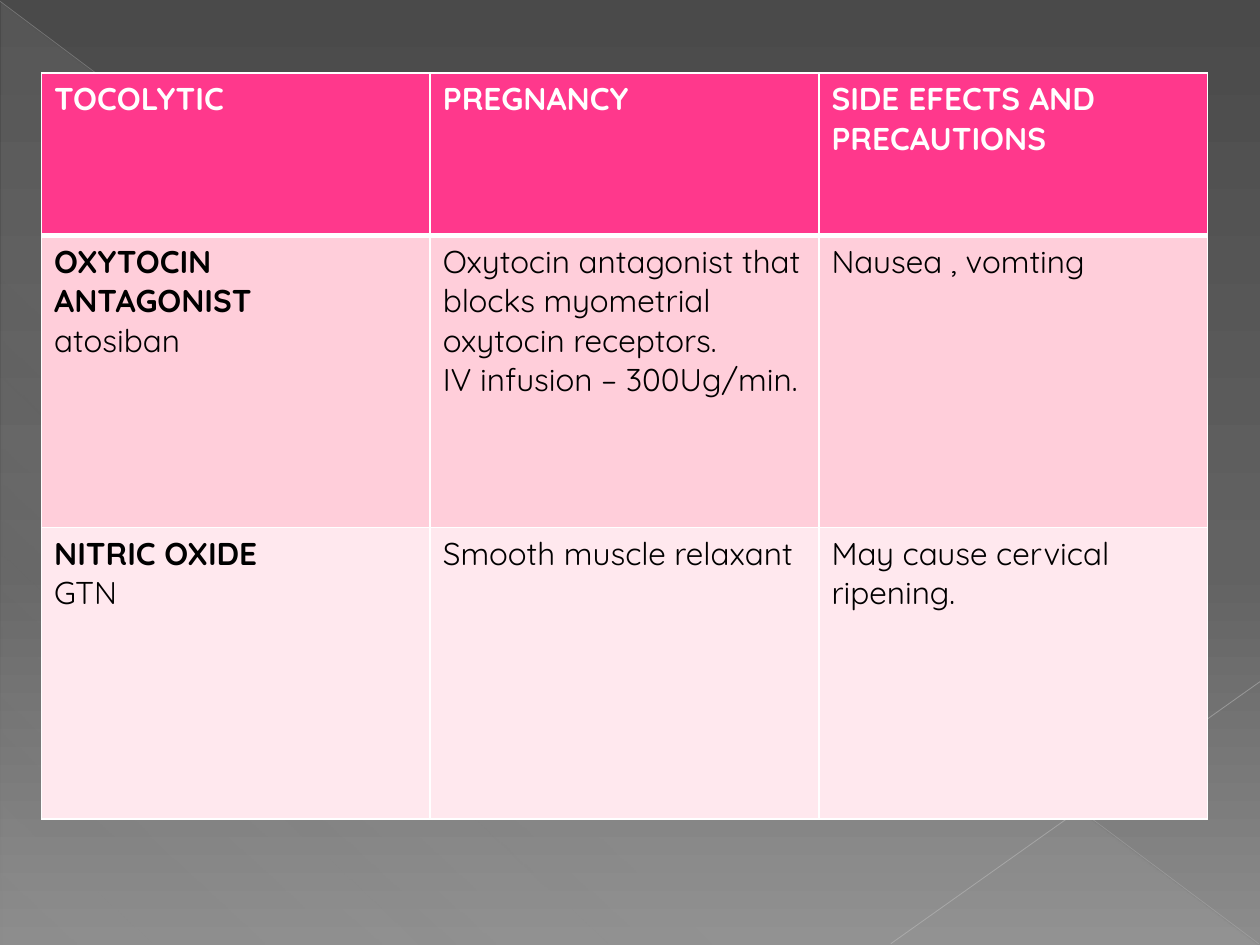
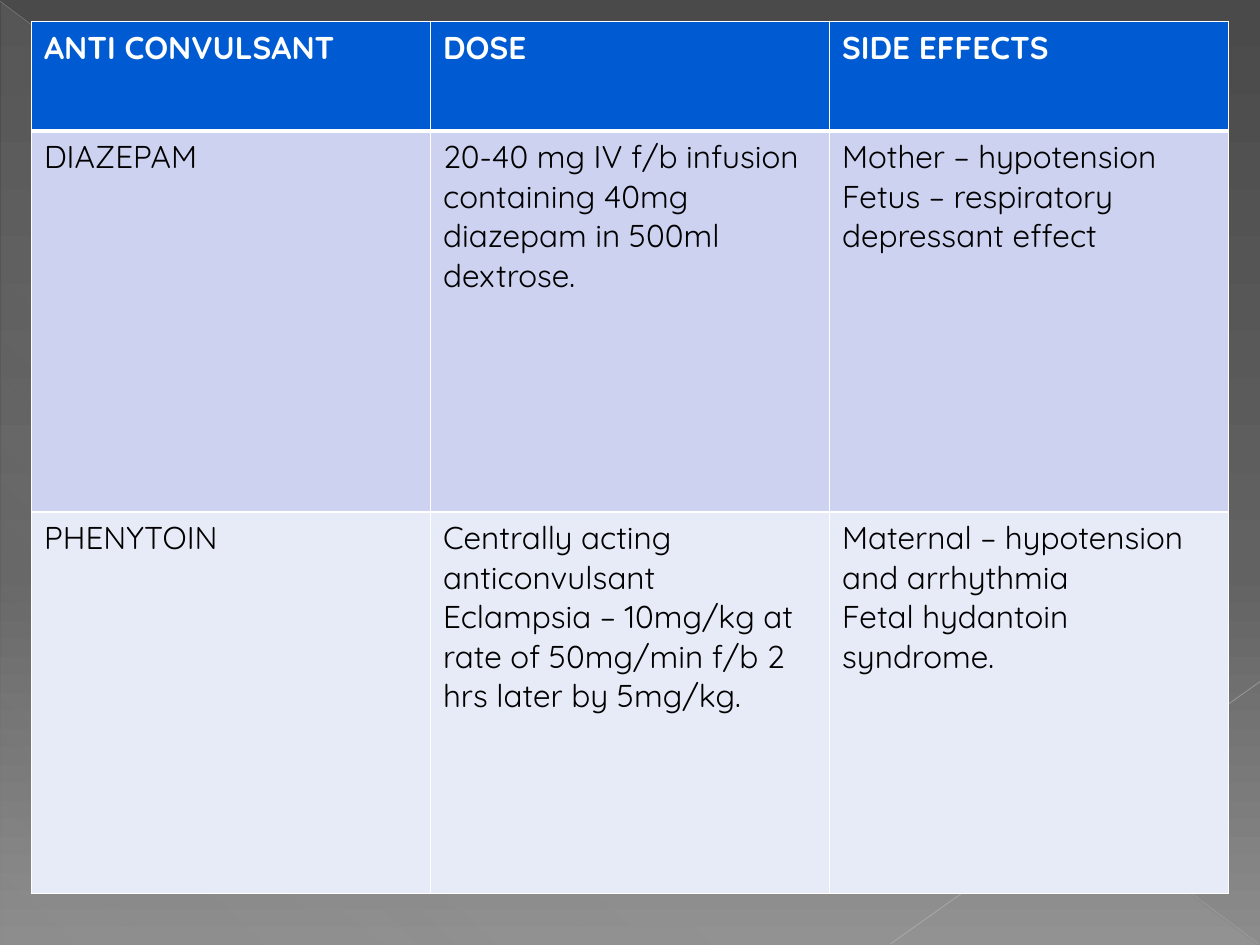
import pptx
import pptx.dml.color
import pptx.enum.shapes
import pptx.oxml
import pptx.oxml.ns
import pptx.util
from pptx.util import Inches

FONT = "Quicksand"
TEXT_SIZE = 18
WHITE, BLACK = "FFFFFF", "000000"

# Gradient stops: position in percent, colour, opacity in percent
BACKGROUND = [(0, "4A4A4A", 100), (60, "626262", 100), (100, "8C8C8C", 100)]
TRIANGLE = [(0, "D2D2D2", 10), (70, "D2D2D2", 8), (100, "D2D2D2", 1)]
# Thin lines: start, end, colour, width in points, opacity in percent
DIAGONALS = [
    ((0, 0.01), (9.99, 7.49), "BFBFBF", 0.39, 35),
    ((10, 5.41), (7.07, 7.49), "C6C6C6", 0.47, 45),
]

# Each cell is a list of paragraphs
TABLES = [
    {
        "corner": (0.33, 0.58),
        "column_width": 3.085,
        "row_heights": (1.29, 2.315, 2.315),
        "row_fills": ("FF388C", "FFCEDA", "FFE8EE"),
        "rows": [
            [["TOCOLYTIC"], ["PREGNANCY"], ["SIDE EFECTS AND PRECAUTIONS"]],
            [["OXYTOCIN ANTAGONIST", "atosiban"],
             ["Oxytocin antagonist that blocks myometrial oxytocin receptors.",
              "IV infusion – 300Ug/min."],
             ["Nausea , vomting"]],
            [["NITRIC OXIDE", "GTN"],
             ["Smooth muscle relaxant"],
             ["May cause cervical ripening."]],
        ],
    },
    {
        "corner": (0.25, 0.17),
        "column_width": 3.167,
        "row_heights": (0.87, 3.025, 3.025),
        "row_fills": ("005BD3", "CCD2EF", "E7EAF7"),
        "rows": [
            [["ANTI CONVULSANT"], ["DOSE"], ["SIDE EFFECTS"]],
            [["DIAZEPAM"],
             ["20-40 mg IV f/b infusion containing 40mg diazepam in 500ml dextrose."],
             ["Mother – hypotension", "Fetus – respiratory depressant effect"]],
            [["PHENYTOIN"],
             ["Centrally acting anticonvulsant",
              "Eclampsia – 10mg/kg at rate of 50mg/min f/b 2 hrs later by 5mg/kg."],
             ["Maternal – hypotension and arrhythmia", "Fetal hydantoin syndrome."]],
        ],
    },
]
DRUG_CLASSES = {"OXYTOCIN ANTAGONIST", "NITRIC OXIDE"}


def color(hex_string):
    return pptx.dml.color.RGBColor.from_string(hex_string)


def element(tag, content="", attributes=""):
    """Make a drawing element from its tag, inner XML and attributes."""
    names = pptx.oxml.ns.nsdecls("a")
    return pptx.oxml.parse_xml(f"<a:{tag} {names} {attributes}>{content}</a:{tag}>")


def find(parent, tag):
    return parent.find(".//" + pptx.oxml.ns.qn(tag))


def set_gradient(owner, fill, stops, angle):
    fill.gradient()
    old = find(owner, "a:gradFill")
    marks = "".join(
        f'<a:gs pos="{position * 1000}"><a:srgbClr val="{shade}">'
        f'<a:alpha val="{opacity * 1000}"/></a:srgbClr></a:gs>'
        for position, shade, opacity in stops)
    content = f'<a:gsLst>{marks}</a:gsLst><a:lin ang="{angle * 60000}" scaled="0"/>'
    old.getparent().replace(old, element("gradFill", content, 'rotWithShape="1"'))


def add_backdrop(page):
    triangle = page.shapes.add_shape(
        pptx.enum.shapes.MSO_SHAPE.RIGHT_TRIANGLE,
        Inches(0.01), Inches(0.02), Inches(9.98), Inches(7.48))
    triangle.shadow.inherit = False
    triangle.line.fill.background()
    set_gradient(triangle.element, triangle.fill, TRIANGLE, 133)
    for start, end, shade, width, opacity in DIAGONALS:
        diagonal = page.shapes.add_connector(
            pptx.enum.shapes.MSO_CONNECTOR.STRAIGHT,
            *(Inches(value) for value in start + end))
        diagonal.line.color.rgb = color(shade)
        diagonal.line.width = pptx.util.Pt(width)
        find(diagonal.element, "a:srgbClr").append(
            element("alpha", attributes=f'val="{opacity * 1000}"'))
        find(diagonal.element, "p:spPr").append(element("effectLst"))


def set_borders(cell, row_index):
    """Draw white edges, with a thick one under the header row."""
    widths = {"lnL": 1, "lnR": 1,
              "lnT": 3 if row_index == 1 else 1,
              "lnB": 3 if row_index == 0 else 1}
    properties = find(cell._tc, "a:tcPr")
    for order, (edge, width) in enumerate(widths.items()):
        content = f'<a:solidFill><a:srgbClr val="{WHITE}"/></a:solidFill>'
        properties.insert(order, element(edge, content, f'w="{width * 12700}"'))


def write_cell(cell, lines, is_header):
    cell.text = "\n".join(lines)
    for para, line in zip(cell.text_frame.paragraphs, lines):
        para.font.name = FONT
        para.font.size = pptx.util.Pt(TEXT_SIZE)
        para.font.bold = is_header or line in DRUG_CLASSES
        para.font.color.rgb = color(WHITE if is_header else BLACK)


def add_drug_table(page, content):
    rows, heights = content["rows"], content["row_heights"]
    column_count = len(rows[0])
    left, top = content["corner"]
    table = page.shapes.add_table(
        len(rows), column_count, Inches(left), Inches(top),
        Inches(content["column_width"] * column_count), Inches(sum(heights))).table
    for column in table.columns:
        column.width = Inches(content["column_width"])
    for row_index, cells in enumerate(rows):
        table.rows[row_index].height = Inches(heights[row_index])
        for column_index, lines in enumerate(cells):
            cell = table.cell(row_index, column_index)
            cell.fill.solid()
            cell.fill.fore_color.rgb = color(content["row_fills"][row_index])
            set_borders(cell, row_index)
            write_cell(cell, lines, row_index == 0)


def main():
    deck = pptx.Presentation()
    deck.slide_width, deck.slide_height = Inches(10), Inches(7.5)
    master = deck.slide_master
    set_gradient(master.element, master.background.fill, BACKGROUND, 90)
    for content in TABLES:
        page = deck.slides.add_slide(deck.slide_layouts[6])
        add_backdrop(page)
        add_drug_table(page, content)
    deck.save("out.pptx")


if __name__ == "__main__":
    main()
